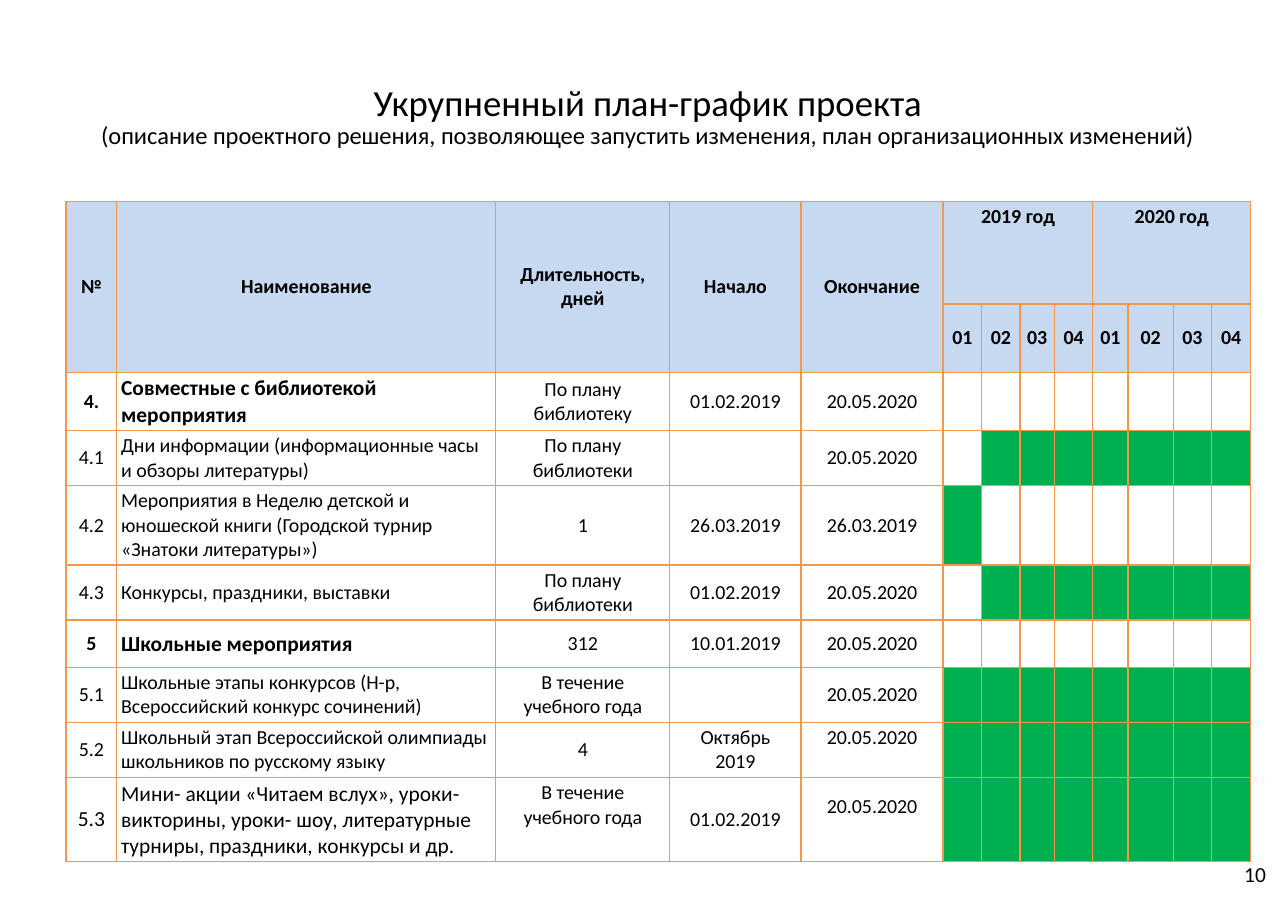
from dataclasses import dataclass

from lxml import etree
from pptx import Presentation
from pptx.dml.color import RGBColor
from pptx.enum.text import MSO_ANCHOR, MSO_AUTO_SIZE, PP_ALIGN
from pptx.oxml.ns import qn
from pptx.util import Inches, Pt

LEFT, CENTER, RIGHT = PP_ALIGN.LEFT, PP_ALIGN.CENTER, PP_ALIGN.RIGHT
TOP, MIDDLE = MSO_ANCHOR.TOP, MSO_ANCHOR.MIDDLE


@dataclass(frozen=True)
class Theme:
    font: str = "Calibri"
    text: str = "000000"
    header: str = "C6D9F1"
    empty: str = "FFFFFF"
    busy: str = "00B050"
    border: str = "F79646"
    border_width: int = 1
    title: int = 24
    subtitle: int = 16
    large: int = 14
    body: int = 13


THEME = Theme()
SLIDE_W, SLIDE_H = 11.69, 8.27
TITLE_BOX = (0.58, 0.5, 10.74, 1.14)
TABLE_BOX = (0.6, 1.83, 10.75, 5.99)
NUMBER_BOX = (8.87, 7.71, 2.73, 0.44)

TITLE = "Укрупненный план-график проекта"
SUBTITLE = ("(описание проектного решения, позволяющее запустить изменения, "
            "план организационных изменений)")

# Relative column widths and row heights
COLUMNS = [0.46, 3.44, 1.58, 1.19, 1.29,
           0.35, 0.35, 0.31, 0.35, 0.32, 0.41, 0.35, 0.35]
ROWS = [0.93, 0.62, 0.53, 0.5, 0.72, 0.5, 0.43, 0.5, 0.5, 0.76]

HEADERS = ["№", "Наименование", "Длительность, дней", "Начало", "Окончание"]
YEARS = ["2019 год", "2020 год"]
QUARTERS = ["01", "02", "03", "04"]
FIRST_QUARTER = len(HEADERS)
FIRST_TASK = 2

# Number, name, duration, start, end, busy quarters
TASKS = [
    ("4.", "Совместные с библиотекой мероприятия", "По плану библиотеку",
     "01.02.2019", "20.05.2020", range(0)),
    ("4.1", "Дни информации (информационные часы и обзоры литературы)",
     "По плану библиотеки", "", "20.05.2020", range(1, 8)),
    ("4.2", "Мероприятия в Неделю детской и юношеской книги "
     "(Городской турнир «Знатоки литературы»)",
     "1", "26.03.2019", "26.03.2019", range(1)),
    ("4.3", "Конкурсы, праздники, выставки", "По плану библиотеки",
     "01.02.2019", "20.05.2020", range(1, 8)),
    ("5", "Школьные мероприятия", "312", "10.01.2019", "20.05.2020", range(0)),
    ("5.1", "Школьные этапы конкурсов (Н-р, Всероссийский конкурс сочинений)",
     "В течение учебного года", "", "20.05.2020", range(8)),
    ("5.2", "Школьный этап Всероссийской олимпиады школьников по русскому языку",
     "4", "Октябрь 2019", "20.05.2020", range(8)),
    ("5.3", "Мини- акции «Читаем вслух», уроки- викторины, уроки- шоу, "
     "литературные турниры, праздники, конкурсы и др.",
     "В течение учебного года", "01.02.2019", "20.05.2020", range(8)),
]
SECTIONS = {"4.", "5"}
LARGE_TASKS = {"5.3"}
TOP_CELLS = {("5.2", 4), ("5.3", 2)}
RAISED_CELLS = {("5.3", 4)}


def add_run(p, text, size, bold=False):
    r = p.add_run()
    r.text = text
    r.font.name = THEME.font
    r.font.size = Pt(size)
    r.font.bold = bold
    r.font.color.rgb = RGBColor.from_string(THEME.text)


def set_margins(target, left, top, right, bottom):
    target.margin_left, target.margin_top = Inches(left), Inches(top)
    target.margin_right, target.margin_bottom = Inches(right), Inches(bottom)


def add_title(s, box):
    sp = s.shapes.title
    sp.left, sp.top, sp.width, sp.height = map(Inches, box)
    tf = sp.text_frame
    tf.word_wrap = True
    tf.auto_size = MSO_AUTO_SIZE.NONE
    tf.vertical_anchor = MIDDLE
    set_margins(tf, 0.11, 0.06, 0.25, 0.06)
    p = tf.paragraphs[0]
    p.alignment = CENTER
    p.line_spacing = 0.85
    add_run(p, TITLE, THEME.title)
    p.add_line_break()
    # The break needs its own size, or it takes the layout's larger one
    etree.SubElement(p._p.find(qn("a:br")), qn("a:rPr"), sz=str(THEME.title * 100))
    add_run(p, SUBTITLE, THEME.subtitle)


def add_borders(cell):
    tc_pr = cell._tc.get_or_add_tcPr()
    for side in ("a:lnL", "a:lnR", "a:lnT", "a:lnB"):
        ln = etree.SubElement(tc_pr, qn(side), w=str(Pt(THEME.border_width)))
        fill = etree.SubElement(ln, qn("a:solidFill"))
        etree.SubElement(fill, qn("a:srgbClr"), val=THEME.border)


def fill_cell(cell, color):
    cell.fill.solid()
    cell.fill.fore_color.rgb = RGBColor.from_string(color)


def write_cell(cell, text, size=THEME.body, bold=False, align=CENTER,
               anchor=MIDDLE, side=0.1, edge=0.03):
    set_margins(cell, side, edge, side, edge)
    cell.vertical_anchor = anchor
    p = cell.text_frame.paragraphs[0]
    p.alignment = align
    if text:
        add_run(p, text, size, bold)


def write_header(table):
    for col, text in enumerate(HEADERS):
        table.cell(0, col).merge(table.cell(1, col))
        write_cell(table.cell(0, col), text, bold=True)
    span = len(QUARTERS)
    for i, year in enumerate(YEARS):
        first = FIRST_QUARTER + i * span
        table.cell(0, first).merge(table.cell(0, first + span - 1))
        write_cell(table.cell(0, first), year, bold=True, anchor=TOP)
        for j, quarter in enumerate(QUARTERS):
            write_cell(table.cell(1, first + j), quarter, bold=True, side=0.04)


def write_task(table, row, task):
    *texts, busy = task
    number = texts[0]
    for col, text in enumerate(texts):
        cell = table.cell(row, col)
        label = col < 2
        section = number in SECTIONS
        large = label and (number in LARGE_TASKS or (section and col == 1))
        write_cell(cell, text, THEME.large if large else THEME.body,
                   bold=label and section,
                   align=LEFT if col == 1 else CENTER,
                   anchor=TOP if (number, col) in TOP_CELLS else MIDDLE,
                   side=0.04 if label else 0.1,
                   edge=0.02 if col == 0 else 0.03)
        if (number, col) in RAISED_CELLS:
            cell.margin_bottom = Inches(0.27)
    for quarter in busy:
        fill_cell(table.cell(row, FIRST_QUARTER + quarter), THEME.busy)


def add_schedule(s, box):
    left, top, width, height = map(Inches, box)
    table = s.shapes.add_table(len(ROWS), len(COLUMNS),
                               left, top, width, height).table
    table.first_row = table.horz_banding = False
    for column, share in zip(table.columns, COLUMNS):
        column.width = int(width * share / sum(COLUMNS))
    for i, (row, share) in enumerate(zip(table.rows, ROWS)):
        row.height = int(height * share / sum(ROWS))
        for cell in row.cells:
            add_borders(cell)
            fill_cell(cell, THEME.header if i < FIRST_TASK else THEME.empty)
    write_header(table)
    for row, task in enumerate(TASKS, FIRST_TASK):
        write_task(table, row, task)


def add_page_number(s, box, number):
    tf = s.shapes.add_textbox(*map(Inches, box)).text_frame
    tf.word_wrap = True
    tf.vertical_anchor = MIDDLE
    set_margins(tf, 0.11, 0.06, 0.11, 0.06)
    p = tf.paragraphs[0]
    p.alignment = RIGHT
    add_run(p, number, THEME.large)


def main():
    prs = Presentation()
    prs.slide_width, prs.slide_height = Inches(SLIDE_W), Inches(SLIDE_H)
    s = prs.slides.add_slide(prs.slide_layouts.get_by_name("Title Only"))
    add_page_number(s, NUMBER_BOX, "10")
    add_title(s, TITLE_BOX)
    add_schedule(s, TABLE_BOX)
    prs.save("out.pptx")


if __name__ == "__main__":
    main()
